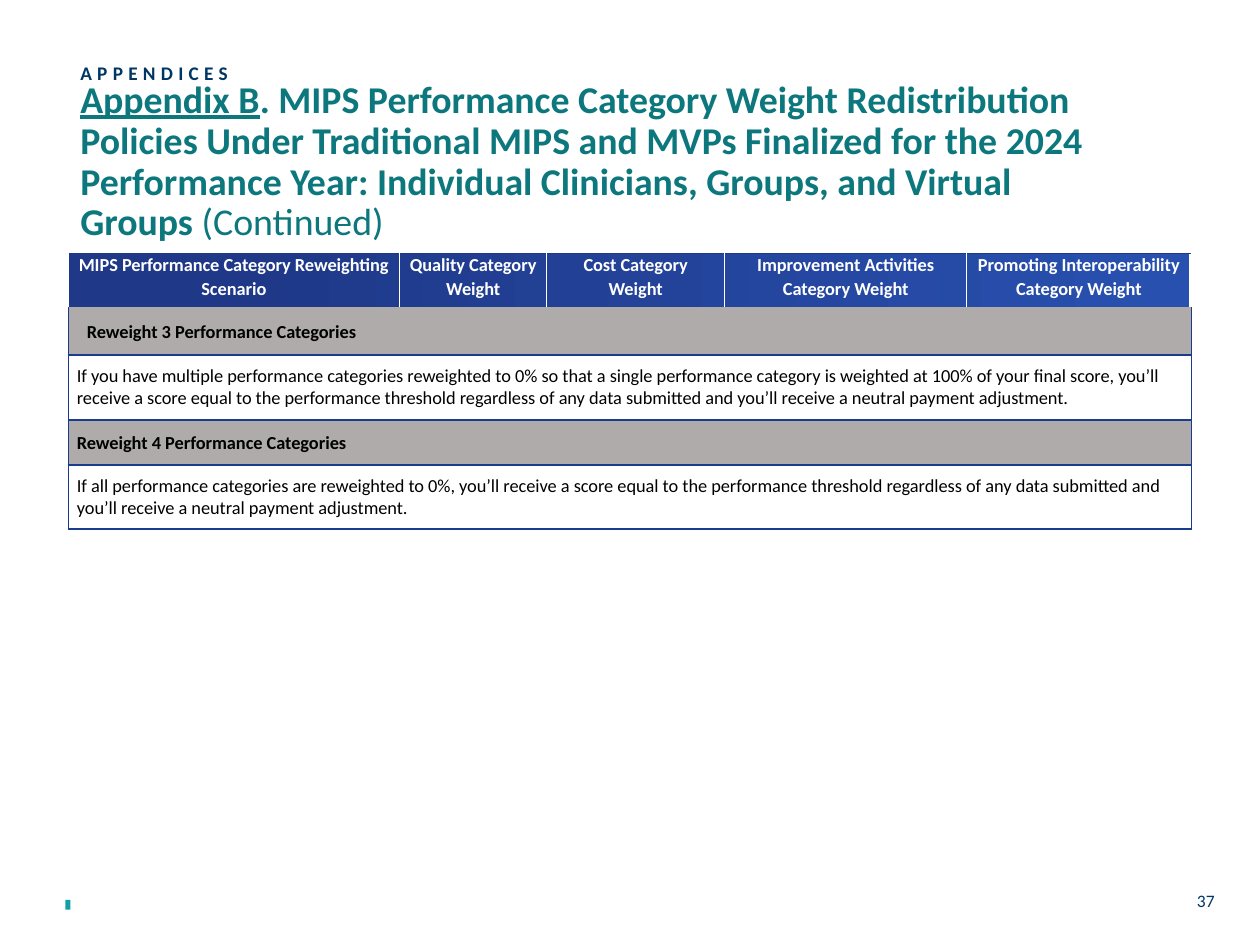
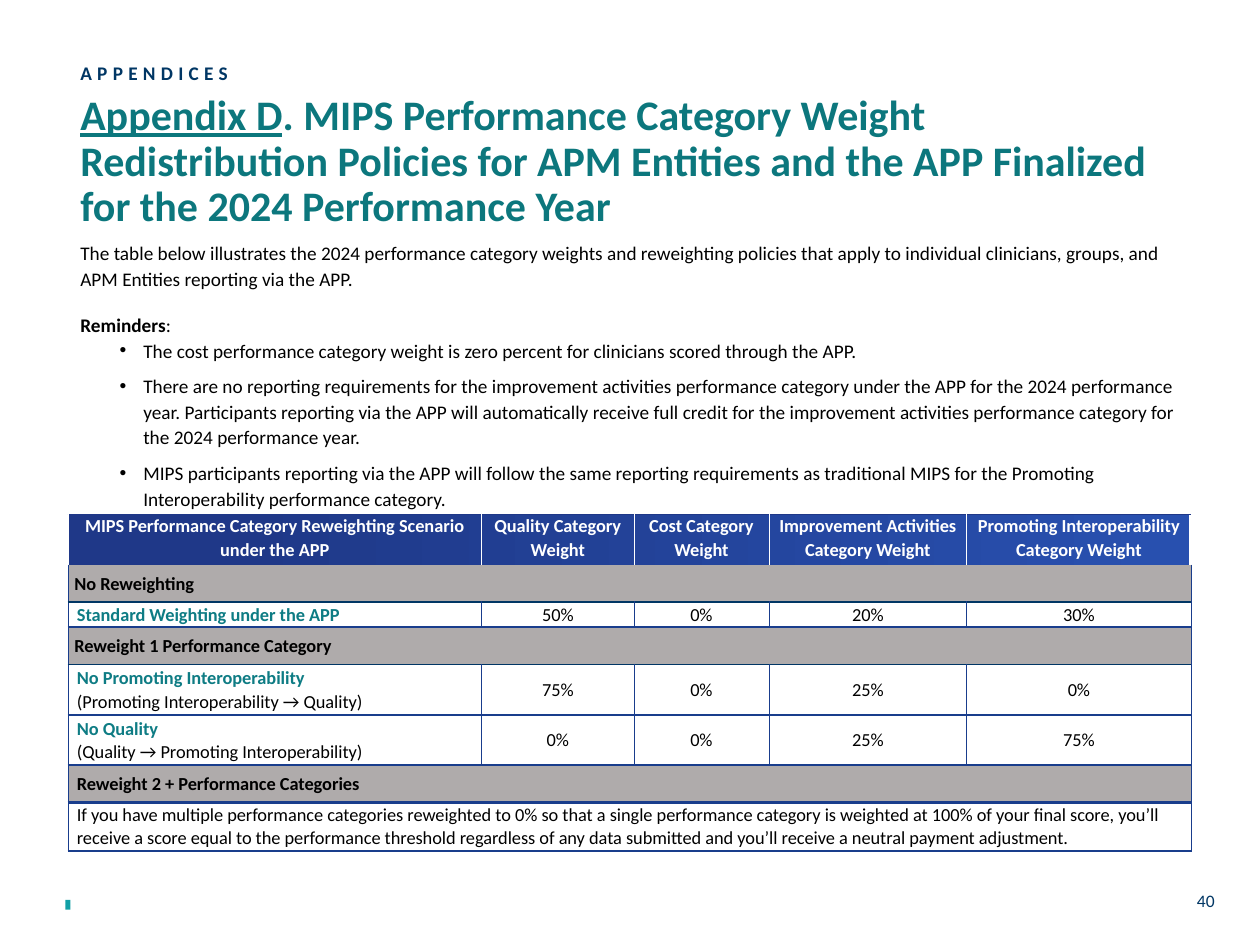
from lxml import etree
from pptx import Presentation
from pptx.dml.color import RGBColor
from pptx.enum.shapes import MSO_SHAPE
from pptx.enum.text import MSO_ANCHOR, PP_ALIGN
from pptx.oxml.ns import qn
from pptx.util import Cm, Pt

RECTANGLE = MSO_SHAPE.RECTANGLE
TOP, MIDDLE = MSO_ANCHOR.TOP, MSO_ANCHOR.MIDDLE
LEFT, CENTER = PP_ALIGN.LEFT, PP_ALIGN.CENTER

FONT = "Calibri"
NO_BREAK_SPACE = chr(160)
BLACK = RGBColor(0x00, 0x00, 0x00)
WHITE = RGBColor(0xFF, 0xFF, 0xFF)
NAVY = RGBColor(0x00, 0x36, 0x64)
TITLE_TEAL = RGBColor(0x0C, 0x77, 0x7D)
ROW_TEAL = RGBColor(0x0E, 0x7C, 0x84)
MARK_TEAL = RGBColor(0x11, 0xA0, 0xA6)
BAND_DARK = RGBColor(0x1F, 0x38, 0x88)
BAND_LIGHT = RGBColor(0x28, 0x50, 0xAF)
RULE_BLUE = RGBColor(0x19, 0x3D, 0x8C)
SECTION_GREY = RGBColor(0xAF, 0xAB, 0xAB)

MARGIN = Cm(1.37)
TABLE_TEXT = 10.5
CELL_INSET = 0.18

SINGLE_CATEGORY_NOTE = (
    "If you have multiple performance categories reweighted to 0% so that a single "
    "performance category is weighted at 100% of your final score, you’ll receive a score "
    "equal to the performance threshold regardless of any data submitted and you’ll receive "
    "a neutral payment adjustment.")
ALL_CATEGORIES_NOTE = (
    "If all performance categories are reweighted to 0%, you’ll receive a score equal to the "
    "performance threshold regardless of any data submitted and you’ll receive a neutral "
    "payment adjustment.")
WEIGHT_HEADERS = ["Quality Category Weight", "Cost Category Weight",
                  "Improvement Activities Category Weight",
                  "Promoting Interoperability Category Weight"]
SCENARIO = "MIPS Performance Category Reweighting Scenario"

# Each row: kind, height in cm, left inset in cm, cell texts
APPENDICES = [
    {
        "number": "37",
        "title_size": 21.6,
        "title": [
            ("Appendix B", True, True),
            (". MIPS Performance Category Weight Redistribution Policies Under Traditional "
             "MIPS and MVPs Finalized for the 2024 Performance Year: Individual Clinicians, "
             "Groups, and Virtual Groups" + NO_BREAK_SPACE, True, False),
            ("(Continued)", False, False),
        ],
        "table_top": 5.1,
        "columns": [6.69, 2.96, 3.59, 4.88, 4.52],
        "rows": [
            ("header", 1.09, CELL_INSET, [SCENARIO] + WEIGHT_HEADERS),
            ("section", 0.97, 0.38, ["Reweight 3 Performance Categories"]),
            ("note", 1.3, CELL_INSET, [SINGLE_CATEGORY_NOTE]),
            ("section", 0.91, CELL_INSET, ["Reweight 4 Performance Categories"]),
            ("note", 1.3, CELL_INSET, [ALL_CATEGORIES_NOTE]),
        ],
    },
    {
        "number": "40",
        "title_size": 24,
        "title": [
            ("Appendix D", True, True),
            (". MIPS Performance Category Weight Redistribution Policies for APM Entities "
             "and the APP Finalized for the 2024 Performance Year", True, False),
        ],
        "intro": "The table below illustrates the 2024 performance category weights and "
                 "reweighting policies that apply to individual clinicians, groups, and APM "
                 "Entities reporting via the APP.",
        "reminders": [
            "The cost performance category weight is zero percent for clinicians scored "
            "through the APP.",
            "There are no reporting requirements for the improvement activities performance "
            "category under the APP for the 2024 performance year. Participants reporting via "
            "the APP will automatically receive full credit for the improvement activities "
            "performance category for the 2024 performance year.",
            "MIPS participants reporting via the APP will follow the same reporting "
            "requirements as traditional MIPS for the Promoting Interoperability performance "
            "category.",
        ],
        "table_top": 10.36,
        "columns": [8.34, 3.07, 2.72, 3.99, 4.52],
        "rows": [
            ("header", 1.02, CELL_INSET, [SCENARIO + " under the APP"] + WEIGHT_HEADERS),
            ("section", 0.76, 0.13, ["No Reweighting"]),
            ("data", 0.5, CELL_INSET,
             ["Standard Weighting under the APP", "50%", "0%", "20%", "30%"]),
            ("section", 0.76, 0.13, ["Reweight 1 Performance Category"]),
            ("data", 1.01, CELL_INSET,
             ["No Promoting Interoperability\n(Promoting Interoperability → Quality)",
              "75%", "0%", "25%", "0%"]),
            ("data", 1.01, CELL_INSET,
             ["No Quality\n(Quality → Promoting Interoperability)",
              "0%", "0%", "25%", "75%"]),
            ("section", 0.76, CELL_INSET, ["Reweight 2 + Performance Categories"]),
            ("note", 0.97, CELL_INSET, [SINGLE_CATEGORY_NOTE]),
        ],
    },
]


def add_frame(page, left, top, width, height, anchor=TOP):
    frame = page.shapes.add_textbox(left, top, width, height).text_frame
    frame.word_wrap = True
    frame.vertical_anchor = anchor
    return frame


def add_span(para, text, size, color, bold=False):
    span = para.add_run()
    span.text = text
    span.font.name = FONT
    span.font.size = Pt(size)
    span.font.color.rgb = color
    span.font.bold = bold
    return span


deck = Presentation()
deck.slide_width, deck.slide_height = Cm(25.4), Cm(19.05)

for appendix in APPENDICES:
    page = deck.slides.add_slide(deck.slide_layouts[6])

    # Footer mark and page number
    mark = page.shapes.add_shape(RECTANGLE, Cm(1.32), Cm(18.14), Cm(0.1), Cm(0.2))
    mark.shadow.inherit = False
    mark.fill.solid()
    mark.fill.fore_color.rgb = MARK_TEAL
    mark.line.fill.background()
    frame = add_frame(page, Cm(23.88), Cm(17.65), Cm(1.52), Cm(1.02), MIDDLE)
    add_span(frame.paragraphs[0], appendix["number"], 10, NAVY)

    # Section label
    frame = add_frame(page, MARGIN, Cm(1.12), Cm(12.7), Cm(0.74))
    label = add_span(frame.paragraphs[0], "APPENDICES", 11, NAVY, True)
    label.font._element.set("spc", "300")

    # Title
    frame = add_frame(page, MARGIN, Cm(2.21), Cm(22.53), Cm(2.13), MIDDLE)
    para = frame.paragraphs[0]
    para.line_spacing = 0.9
    for text, bold, underline in appendix["title"]:
        span = add_span(para, text, appendix["title_size"], TITLE_TEAL, bold)
        span.font.underline = underline

    # Introduction and reminders
    if "intro" in appendix:
        frame = add_frame(page, MARGIN, Cm(4.7), Cm(22.68), Cm(5.74))
        para = frame.paragraphs[0]
        para.line_spacing = 1.1
        para.space_after = Pt(12)
        add_span(para, appendix["intro"], 11, BLACK)
        para = frame.add_paragraph()
        para.line_spacing = 1.1
        add_span(para, "Reminders", 11, BLACK, True)
        add_span(para, ":", 11, BLACK)
        for reminder in appendix["reminders"]:
            para = frame.add_paragraph()
            para.line_spacing = 1.1
            para.space_after = Pt(6)
            properties = para._p.get_or_add_pPr()
            properties.set("marL", str(Cm(1.27)))
            properties.set("indent", str(-Cm(0.48)))
            etree.SubElement(properties, qn("a:buFont"), typeface="Arial")
            etree.SubElement(properties, qn("a:buChar"), char="•")
            add_span(para, reminder, 11, BLACK)

    # Gradient band behind the table header
    table_top = Cm(appendix["table_top"])
    band = page.shapes.add_shape(RECTANGLE, MARGIN, table_top, Cm(22.61), Cm(1.09))
    band.shadow.inherit = False
    band.line.fill.background()
    band.fill.gradient()
    band.fill.gradient_angle = 0
    for stop, color, position in zip(band.fill.gradient_stops,
                                     (BAND_DARK, BAND_LIGHT), (0.15, 0.98)):
        stop.color.rgb = color
        stop.position = position

    # Table grid
    columns, rows = appendix["columns"], appendix["rows"]
    table = page.shapes.add_table(
        len(rows), len(columns), MARGIN, table_top, Cm(sum(columns)),
        Cm(sum(row[1] for row in rows))).table
    table.first_row = table.horz_banding = False
    for column, width in zip(table.columns, columns):
        column.width = Cm(width)

    rule_above = (BAND_DARK, 0.5)
    for index, (kind, height, inset, texts) in enumerate(rows):
        table.rows[index].height = Cm(height)
        next_kind = rows[index + 1][0] if index + 1 < len(rows) else None
        rule_below = (RULE_BLUE, 1.5)
        if kind == "header":
            rule_below = None
        elif kind == "section" and next_kind == "data":
            rule_below = (NAVY, 1)
        side = (WHITE if kind == "header" else RULE_BLUE, 0.5)

        # Borders and fills
        for cell in table.rows[index].cells:
            properties = cell._tc.get_or_add_tcPr()
            for tag, rule in (("a:lnL", side), ("a:lnR", side),
                              ("a:lnT", rule_above), ("a:lnB", rule_below)):
                line = etree.SubElement(properties, qn(tag))
                if rule is None:
                    etree.SubElement(line, qn("a:noFill"))
                    continue
                line.set("w", str(Pt(rule[1])))
                fill = etree.SubElement(line, qn("a:solidFill"))
                etree.SubElement(fill, qn("a:srgbClr"), val=str(rule[0]))
            if kind == "section":
                cell.fill.solid()
                cell.fill.fore_color.rgb = SECTION_GREY
            else:
                cell.fill.background()
        rule_above = rule_below
        if len(texts) == 1:
            table.cell(index, 0).merge(table.cell(index, len(columns) - 1))

        # Cell texts
        for number, text in enumerate(texts):
            cell = table.cell(index, number)
            cell.margin_left, cell.margin_right = Cm(inset), Cm(CELL_INSET)
            cell.margin_top = cell.margin_bottom = 0
            cell.vertical_anchor = TOP if kind == "header" else MIDDLE
            scenario = kind == "data" and number == 0
            for order, part in enumerate(text.split("\n")):
                frame = cell.text_frame
                para = frame.add_paragraph() if order else frame.paragraphs[0]
                centered = kind == "header" or (kind == "data" and number > 0)
                para.alignment = CENTER if centered else LEFT
                para.line_spacing = 1.0 if kind == "note" else 1.07
                teal = scenario and order == 0
                color = WHITE if kind == "header" else ROW_TEAL if teal else BLACK
                add_span(para, part, TABLE_TEXT, color,
                         teal or kind in ("header", "section"))

deck.save("out.pptx")
